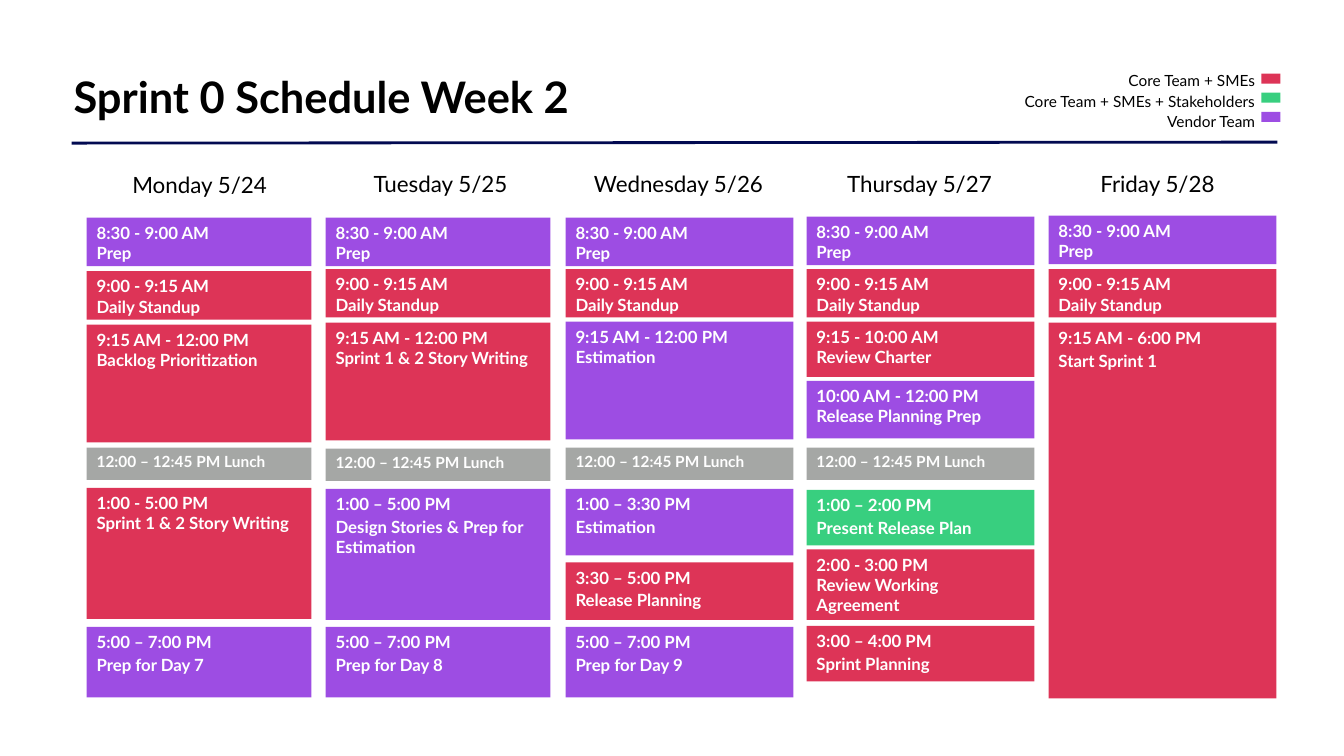
"""Build the Sprint 0 week 2 schedule slide."""
from typing import NamedTuple

from lxml.etree import SubElement
from pptx import Presentation
from pptx.dml.color import RGBColor
from pptx.enum.shapes import MSO_CONNECTOR as Connector, MSO_SHAPE as Shape
from pptx.enum.text import MSO_ANCHOR as Anchor, MSO_AUTO_SIZE as AutoSize, PP_ALIGN as Align
from pptx.oxml.ns import qn
from pptx.util import Inches, Pt

BLACK = RGBColor(0x00, 0x00, 0x00)
WHITE = RGBColor(0xFF, 0xFF, 0xFF)
NAVY = RGBColor(0x02, 0x0A, 0x51)
RED = RGBColor(0xDD, 0x34, 0x57)
GREEN = RGBColor(0x38, 0xCF, 0x7F)
PURPLE = RGBColor(0x9D, 0x4D, 0xE3)
GRAY = RGBColor(0xA5, 0xA7, 0xA5)
FONT = "Lato"


class Session(NamedTuple):
    top: float
    height: float
    color: RGBColor
    time: str
    topic: str
    gap: float = 0


class Day(NamedTuple):
    name: str
    heading_left: float
    heading_top: float
    left: float
    width: float
    prep_top: float
    standup_top: float
    lunch_top: float | None
    sessions: list


LEGEND = [
    ("Core Team + SMEs", RED),
    ("Core Team + SMEs + Stakeholders", GREEN),
    ("Vendor Team", PURPLE),
]

DAYS = [
    Day("Monday 5/24", 0.85, 1.65, 0.86, 2.23, 2.16, 2.69, 4.44, [
        Session(3.22, 1.17, RED, "9:15 AM - 12:00 PM", "Backlog Prioritization"),
        Session(4.84, 1.3, RED, "1:00 - 5:00 PM", "Sprint 1 & 2 Story Writing"),
        Session(6.22, 0.7, PURPLE, "5:00 – 7:00 PM", "Prep for Day 7", 1.8),
    ]),
    Day("Tuesday 5/25", 3.24, 1.64, 3.23, 2.23, 2.16, 2.67, 4.45, [
        Session(3.2, 1.17, RED, "9:15 AM - 12:00 PM", "Sprint 1 & 2 Story Writing"),
        Session(4.85, 1.3, PURPLE, "1:00 – 5:00 PM", "Design Stories & Prep for Estimation", 1.8),
        Session(6.22, 0.7, PURPLE, "5:00 – 7:00 PM", "Prep for Day 8", 1.8),
    ]),
    Day("Wednesday 5/26", 5.6, 1.64, 5.61, 2.26, 2.16, 2.67, 4.44, [
        Session(3.19, 1.17, PURPLE, "9:15 AM - 12:00 PM", "Estimation"),
        Session(4.85, 0.66, PURPLE, "1:00 – 3:30 PM", "Estimation", 1.8),
        Session(5.58, 0.57, RED, "3:30 – 5:00 PM", "Release Planning", 1.8),
        Session(6.22, 0.7, PURPLE, "5:00 – 7:00 PM", "Prep for Day 9", 1.8),
    ]),
    Day("Thursday 5/27", 7.99, 1.64, 8, 2.26, 2.15, 2.67, 4.44, [
        Session(3.19, 0.55, RED, "9:15 - 10:00 AM", "Review Charter"),
        Session(3.78, 0.57, PURPLE, "10:00 AM - 12:00 PM", "Release Planning Prep"),
        Session(4.86, 0.55, GREEN, "1:00 – 2:00 PM", "Present Release Plan", 1.8),
        Session(5.45, 0.7, RED, "2:00 - 3:00 PM", "Review Working Agreement"),
        Session(6.21, 0.55, RED, "3:00 – 4:00 PM", "Sprint Planning", 1.8),
    ]),
    Day("Friday 5/28", 10.35, 1.64, 10.4, 2.26, 2.14, 2.67, None, [
        Session(3.2, 3.73, RED, "9:15 AM - 6:00 PM", "Start Sprint 1", 2.4),
    ]),
]


def style_paragraph(paragraph, size, color, align=Align.LEFT, bold=False):
    paragraph.alignment = align
    paragraph.font.name = FONT
    paragraph.font.size = Pt(size)
    paragraph.font.bold = bold
    paragraph.font.color.rgb = color


def set_insets(frame, horizontal, vertical):
    frame.margin_left = frame.margin_right = Inches(horizontal)
    frame.margin_top = frame.margin_bottom = Inches(vertical)
    frame.word_wrap = True


def add_title(slide, text):
    title = slide.shapes.title
    title.left, title.top = Inches(0.6), Inches(0.6)
    title.width, title.height = Inches(8.94), Inches(0.7)
    frame = title.text_frame
    frame.text = text
    frame.auto_size = AutoSize.NONE
    frame.vertical_anchor = Anchor.MIDDLE
    set_insets(frame, 0.13, 0.07)
    style_paragraph(frame.paragraphs[0], 31, BLACK, bold=True)


def add_rule(slide):
    rule = slide.shapes.add_connector(
        Connector.STRAIGHT, Inches(0.71), Inches(1.42), Inches(12.67), Inches(1.41))
    rule.line.color.rgb = NAVY
    rule.line.width = Pt(2)
    SubElement(rule._element.spPr, qn("a:effectLst"))


def add_label(slide, left, top, width, height, text, size, align, inset):
    label = slide.shapes.add_textbox(Inches(left), Inches(top), Inches(width), Inches(height))
    frame = label.text_frame
    frame.text = text
    set_insets(frame, inset, 0.05)
    style_paragraph(frame.paragraphs[0], size, BLACK, align)


def add_block(slide, left, top, width, height, color):
    block = slide.shapes.add_shape(
        Shape.RECTANGLE, Inches(left), Inches(top), Inches(width), Inches(height))
    block.shadow.inherit = False
    block.fill.solid()
    block.fill.fore_color.rgb = color
    block.line.fill.background()
    return block


def add_session(slide, day, session):
    block = add_block(slide, day.left, session.top, day.width, session.height, session.color)
    frame = block.text_frame
    frame.vertical_anchor = Anchor.TOP
    set_insets(frame, 0.1, 0.05)
    frame.text = f"{session.time}\n{session.topic}"
    for paragraph in frame.paragraphs:
        style_paragraph(paragraph, 12, WHITE, bold=True)
    frame.paragraphs[1].space_before = Pt(session.gap)


def add_lunch(slide, day):
    block = add_block(slide, day.left, day.lunch_top, day.width, 0.32, GRAY)
    frame = block.text_frame
    frame.vertical_anchor = Anchor.TOP
    set_insets(frame, 0.1, 0.05)
    frame.text = "12:00 – 12:45 PM Lunch"
    style_paragraph(frame.paragraphs[0], 11, WHITE, bold=True)


def add_day(slide, day):
    add_label(slide, day.heading_left, day.heading_top, 2.26, 0.4,
              day.name, 16, Align.CENTER, 0.1)
    daily = [
        Session(day.prep_top, 0.48, PURPLE, "8:30 - 9:00 AM", "Prep"),
        Session(day.standup_top, 0.48, RED, "9:00 - 9:15 AM", "Daily Standup"),
    ]
    for session in daily + day.sessions:
        add_session(slide, day, session)
    if day.lunch_top is not None:
        add_lunch(slide, day)


def add_legend(slide):
    for row, (text, color) in enumerate(LEGEND):
        add_label(slide, 9.7, 0.66 + 0.2 * row, 2.8, 0.21, text, 11, Align.RIGHT, 0.05)
        add_block(slide, 12.51, 0.73 + 0.19 * row, 0.19, 0.1, color)


def main():
    presentation = Presentation()
    presentation.slide_width = Inches(13.33)
    presentation.slide_height = Inches(7.5)
    slide = presentation.slides.add_slide(presentation.slide_layouts[5])
    add_title(slide, "Sprint 0 Schedule Week 2")
    add_rule(slide)
    add_legend(slide)
    for day in DAYS:
        add_day(slide, day)
    presentation.save("out.pptx")


if __name__ == "__main__":
    main()
